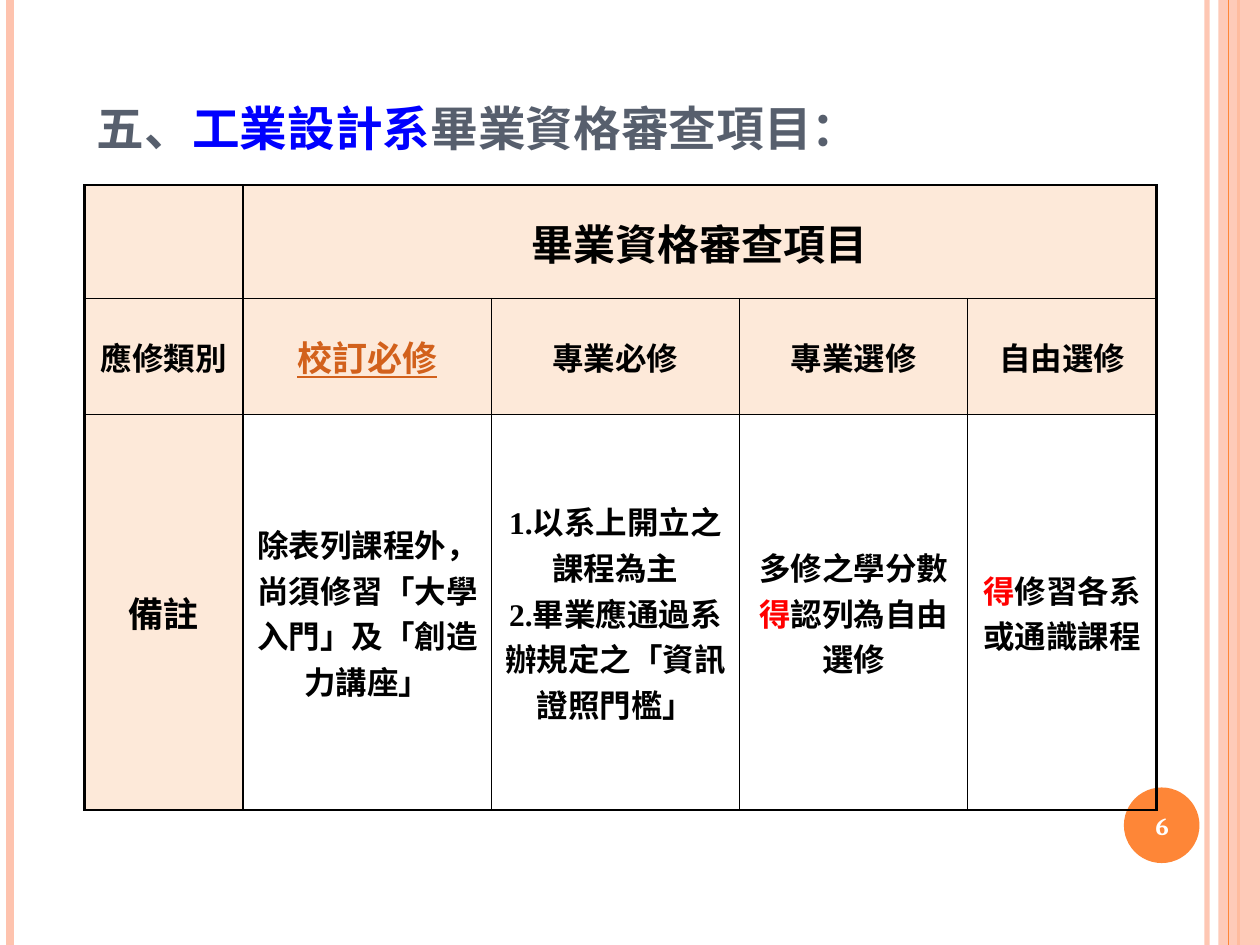
"""Build the slide listing the graduation review items of a design department."""
from dataclasses import dataclass

import pptx
import pptx.dml.color
import pptx.enum.shapes
import pptx.enum.text
import pptx.oxml
import pptx.oxml.ns
import pptx.util
from pptx.util import Inches

CJK = "Noto Sans CJK SC"
SERIF = "Times New Roman"
BLACK, RED, WHITE = "000000", "FF0000", "FFFFFF"
ORANGE, PINK, CREAM, SLATE = "FE8637", "FEC3AE", "FDE9D9", "575F6D"
CENTER = pptx.enum.text.PP_ALIGN.CENTER
MIDDLE = pptx.enum.text.MSO_ANCHOR.MIDDLE


@dataclass
class Span:
    text: str
    color: str = BLACK
    underline: bool = False


@dataclass
class Entry:
    row: int
    column: int
    paragraphs: list[list[Span]]
    size: float = 18
    fill: str | None = None
    columns: int = 1


@dataclass
class Stripe:
    x: float
    color: str
    width: float
    opacity: int = 100


STRIPES_BELOW = [Stripe(9.58, PINK, 3, 93), Stripe(0.08, PINK, 4.5), Stripe(9.83, ORANGE, 1.5)]
STRIPE_ABOVE = Stripe(9.75, ORANGE, 0.75)

COLUMN_WIDTHS = [1.26, 1.97, 1.97, 1.81, 1.5]
ROW_HEIGHTS = [0.9, 0.92, 3.14]
ENTRIES = [
    Entry(0, 0, [], fill=CREAM),
    Entry(0, 1, [[Span("畢業資格審查項目")]], 24, CREAM, 4),
    Entry(1, 0, [[Span("應修類別")]], fill=CREAM),
    Entry(1, 1, [[Span("校訂必修", "D2611C", True)]], 20, CREAM),
    Entry(1, 2, [[Span("專業必修")]], fill=CREAM),
    Entry(1, 3, [[Span("專業選修")]], fill=CREAM),
    Entry(1, 4, [[Span("自由選修")]], fill=CREAM),
    Entry(2, 0, [[Span("備註")]], 20, CREAM),
    Entry(2, 1, [[Span("除表列課程外，尚須修習「大學入門」及「創造力講座」")]]),
    Entry(2, 2, [[Span("1.以系上開立之課程為主")],
                 [Span("2.畢業應通過系辦規定之「資訊證照門檻」")]]),
    Entry(2, 3, [[Span("多修之學分數"), Span("得", RED), Span("認列為自由選修")]]),
    Entry(2, 4, [[Span("得", RED), Span("修習各系或通識課程")]]),
]


def rgb(color: str) -> pptx.dml.color.RGBColor:
    return pptx.dml.color.RGBColor.from_string(color)


def add_element(parent, tag: str, **attributes):
    element = pptx.oxml.parse_xml(f"<{tag} {pptx.oxml.ns.nsdecls('a')}/>")
    for name, value in attributes.items():
        element.set(name, str(value))
    parent.append(element)
    return element


def set_opacity(shape, opacity: int) -> None:
    for color in shape._element.spPr.iter(pptx.oxml.ns.qn("a:srgbClr")):
        add_element(color, "a:alpha", val=opacity * 1000)


def add_stripe(page, stripe: Stripe) -> None:
    line = page.shapes.add_connector(
        pptx.enum.shapes.MSO_CONNECTOR.STRAIGHT,
        Inches(stripe.x), Inches(0), Inches(stripe.x), Inches(7.5))
    line.line.color.rgb = rgb(stripe.color)
    line.line.width = pptx.util.Pt(stripe.width)
    set_opacity(line, stripe.opacity)
    add_element(line._element.spPr, "a:effectLst")


def add_solid(page, kind, left: float, top: float, width: float, height: float, color: str):
    shape = page.shapes.add_shape(
        kind, Inches(left), Inches(top), Inches(width), Inches(height))
    shape.shadow.inherit = False
    shape.fill.solid()
    shape.fill.fore_color.rgb = rgb(color)
    shape.line.fill.background()
    return shape


def write(frame, paragraphs: list[list[Span]], size: float, font: str, align=CENTER) -> None:
    frame.word_wrap = True
    frame.text = "\n".join("" for _ in paragraphs)
    for paragraph, spans in zip(frame.paragraphs, paragraphs):
        paragraph.alignment = align
        for span in spans:
            run = paragraph.add_run()
            run.text = span.text
            run.font.size = pptx.util.Pt(size)
            run.font.bold = True
            run.font.underline = span.underline
            run.font.color.rgb = rgb(span.color)
            run.font.name = font
            add_element(run.font._element, "a:ea", typeface=CJK)


def add_text(page, left: float, top: float, width: float, height: float,
             spans: list[Span], size: float, font: str, align, anchor):
    box = page.shapes.add_textbox(Inches(left), Inches(top), Inches(width), Inches(height))
    write(box.text_frame, [spans], size, font, align)
    box.text_frame.vertical_anchor = anchor
    return box


def set_borders(cell, entry: Entry) -> None:
    outer_edges = {
        "L": entry.column == 0,
        "R": entry.column + entry.columns == len(COLUMN_WIDTHS),
        "T": entry.row == 0,
        "B": entry.row == len(ROW_HEIGHTS) - 1,
    }
    properties = cell._tc.get_or_add_tcPr()
    for side, outer in outer_edges.items():
        border = add_element(properties, f"a:ln{side}", w=pptx.util.Pt(1.5 if outer else 1))
        add_element(add_element(border, "a:solidFill"), "a:srgbClr", val=BLACK)


def add_review_table(page) -> None:
    table = page.shapes.add_table(
        len(ROW_HEIGHTS), len(COLUMN_WIDTHS), Inches(0.67), Inches(1.47),
        Inches(sum(COLUMN_WIDTHS)), Inches(sum(ROW_HEIGHTS))).table
    table.first_row = table.horz_banding = False
    for column, width in zip(table.columns, COLUMN_WIDTHS):
        column.width = Inches(width)
    for row, height in zip(table.rows, ROW_HEIGHTS):
        row.height = Inches(height)
    for entry in ENTRIES:
        cell = table.cell(entry.row, entry.column)
        if entry.columns > 1:
            cell.merge(table.cell(entry.row, entry.column + entry.columns - 1))
        set_borders(cell, entry)
        if entry.fill:
            cell.fill.solid()
            cell.fill.fore_color.rgb = rgb(entry.fill)
        else:
            cell.fill.background()
        cell.vertical_anchor = MIDDLE
        write(cell.text_frame, entry.paragraphs, entry.size, SERIF)


def main() -> None:
    deck = pptx.Presentation()
    deck.slide_width, deck.slide_height = Inches(10), Inches(7.5)
    page = deck.slides.add_slide(deck.slide_layouts[6])
    shapes = pptx.enum.shapes.MSO_SHAPE

    for stripe in STRIPES_BELOW:
        add_stripe(page, stripe)
    band = add_solid(page, shapes.RECTANGLE, 9.67, 0, 0.33, 7.5, PINK)
    set_opacity(band, 87)
    add_stripe(page, STRIPE_ABOVE)
    add_solid(page, shapes.OVAL, 8.92, 6.25, 0.6, 0.6, ORANGE)

    heading = [Span("五、", SLATE), Span("工業設計系", "0000FF"), Span("畢業資格審查項目：", SLATE)]
    title = add_text(page, 0.67, 0.6, 8.6, 0.71, heading, 34, CJK,
                     pptx.enum.text.PP_ALIGN.LEFT, pptx.enum.text.MSO_ANCHOR.BOTTOM)
    for run in title.text_frame.paragraphs[0].runs:
        run.font._element.set("cap", "small")
    add_text(page, 8.89, 6.27, 0.67, 0.57, [Span("6", WHITE)], 14, "Cambria", CENTER, MIDDLE)
    add_review_table(page)
    deck.save("out.pptx")


if __name__ == "__main__":
    main()
